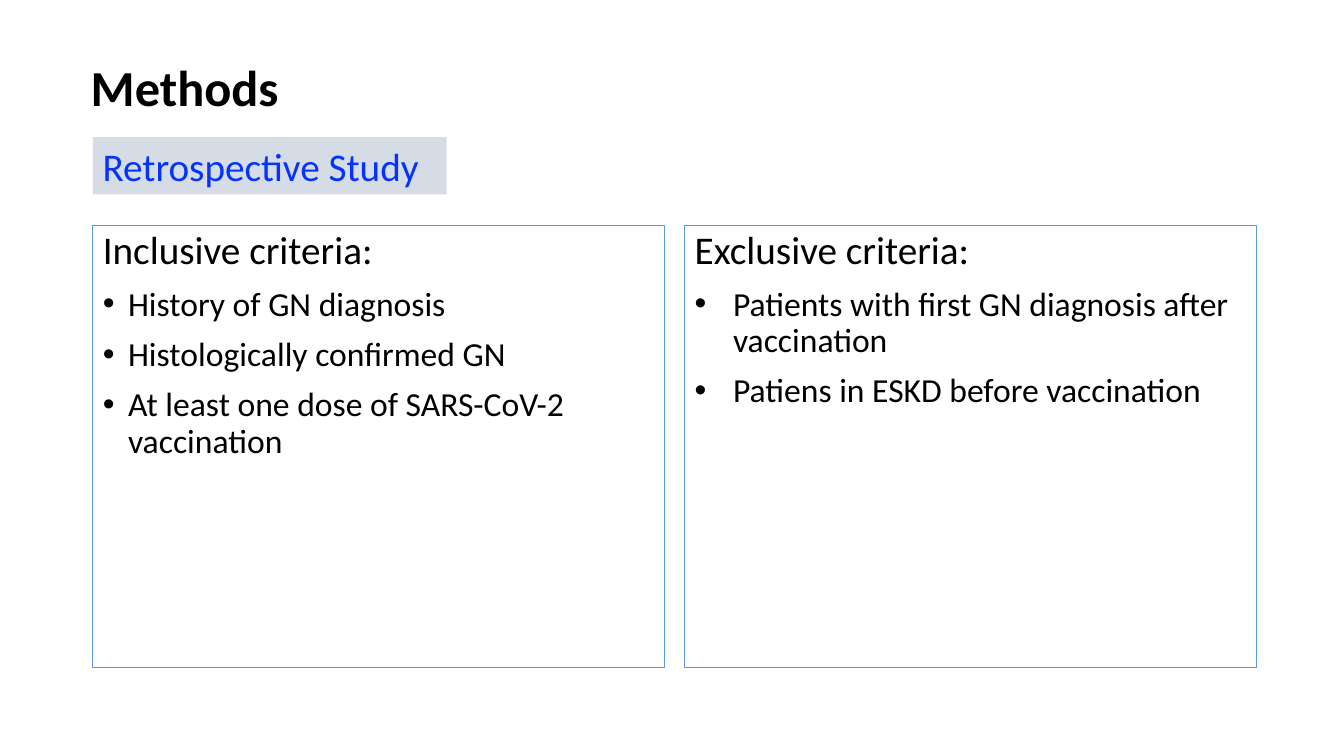
from lxml.etree import SubElement
from pptx import Presentation
from pptx.dml.color import RGBColor
from pptx.enum.shapes import MSO_SHAPE
from pptx.enum.text import MSO_ANCHOR, MSO_AUTO_SIZE, PP_ALIGN
from pptx.oxml.ns import qn
from pptx.util import Inches, Pt

FONT = "Calibri"
BLACK, BLUE, PALE, BORDER = "000000", "0432FF", "D6DCE5", "5B9BD5"

# Two-column grid, in inches
LEFT, COL_W, GUTTER = 0.92, 5.67, 0.2
PANEL_TOP, PANEL_H = 2.24, 4.38

PANELS = [
    ("Inclusive criteria:", 0.25, [
        "History of GN diagnosis",
        "Histologically confirmed GN",
        "At least one dose of SARS-CoV-2 vaccination",
    ]),
    ("Exclusive criteria:", 0.38, [
        "Patients with first GN diagnosis after vaccination",
        "Patiens in ESKD before vaccination",
    ]),
]


def rgb(value):
    return RGBColor.from_string(value)


def place(sp, left, top, width, height):
    sp.left, sp.top = Inches(left), Inches(top)
    sp.width, sp.height = Inches(width), Inches(height)


def prepare_frame(sp, anchor):
    tf = sp.text_frame
    tf.word_wrap = True
    tf.auto_size = MSO_AUTO_SIZE.NONE
    tf.vertical_anchor = anchor
    return tf


def add_run(p, text, size, color=BLACK, bold=False):
    p.alignment = PP_ALIGN.LEFT
    r = p.add_run()
    r.text = text
    r.font.name, r.font.size, r.font.bold = FONT, Pt(size), bold
    r.font.color.rgb = rgb(color)


def set_bullet(p, indent):
    """Hang a bullet by the indent; an indent of zero means no bullet."""
    pPr = p._p.get_or_add_pPr()
    pPr.set("marL", str(Inches(indent)))
    pPr.set("indent", str(-Inches(indent)))
    if indent:
        SubElement(pPr, qn("a:buFont"), typeface="Arial")
        SubElement(pPr, qn("a:buChar"), char="•")
    else:
        SubElement(pPr, qn("a:buNone"))


def fill_title(sp, text):
    place(sp, 0.8, 0.17, 11.5, 1.45)
    p = prepare_frame(sp, MSO_ANCHOR.MIDDLE).paragraphs[0]
    p.line_spacing = 0.9
    add_run(p, text, 36, bold=True)


def fill_panel(sp, column, heading, indent, items):
    place(sp, LEFT + column * (COL_W + GUTTER), PANEL_TOP, COL_W, PANEL_H)
    sp.line.color.rgb = rgb(BORDER)
    sp.line.width = Pt(0.75)
    tf = prepare_frame(sp, MSO_ANCHOR.TOP)
    rows = [(heading, 28, 0)] + [(item, 24, indent) for item in items]
    for i, (text, size, hang) in enumerate(rows):
        p = tf.add_paragraph() if i else tf.paragraphs[0]
        p.line_spacing, p.space_before = 0.9, Pt(10)
        set_bullet(p, hang)
        add_run(p, text, size)


def add_label(s, text):
    sp = s.shapes.add_shape(MSO_SHAPE.RECTANGLE, 0, 0, 0, 0)
    place(sp, LEFT, 1.36, 3.51, 0.57)
    sp.shadow.inherit = False
    sp.fill.solid()
    sp.fill.fore_color.rgb = rgb(PALE)
    sp.line.fill.background()
    tf = prepare_frame(sp, MSO_ANCHOR.TOP)
    add_run(tf.paragraphs[0], text, 28, BLUE)


def main():
    prs = Presentation()
    prs.slide_width, prs.slide_height = Inches(13.33), Inches(7.5)
    s = prs.slides.add_slide(prs.slide_layouts.get_by_name("Two Content"))

    # Title
    fill_title(s.shapes.title, "Methods")

    # Criteria side by side
    for column, panel in enumerate(PANELS):
        fill_panel(s.placeholders[column + 1], column, *panel)

    # Study type
    add_label(s, "Retrospective Study")

    prs.save("out.pptx")


if __name__ == "__main__":
    main()
